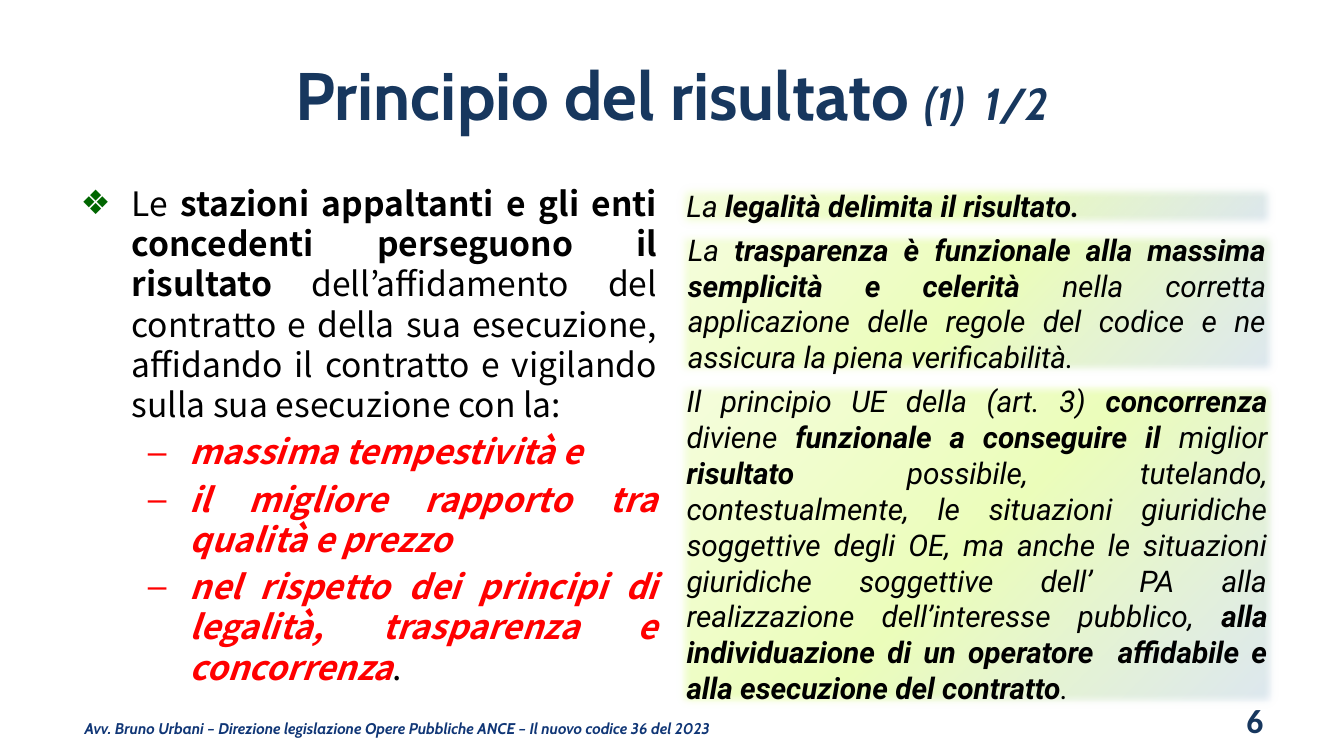
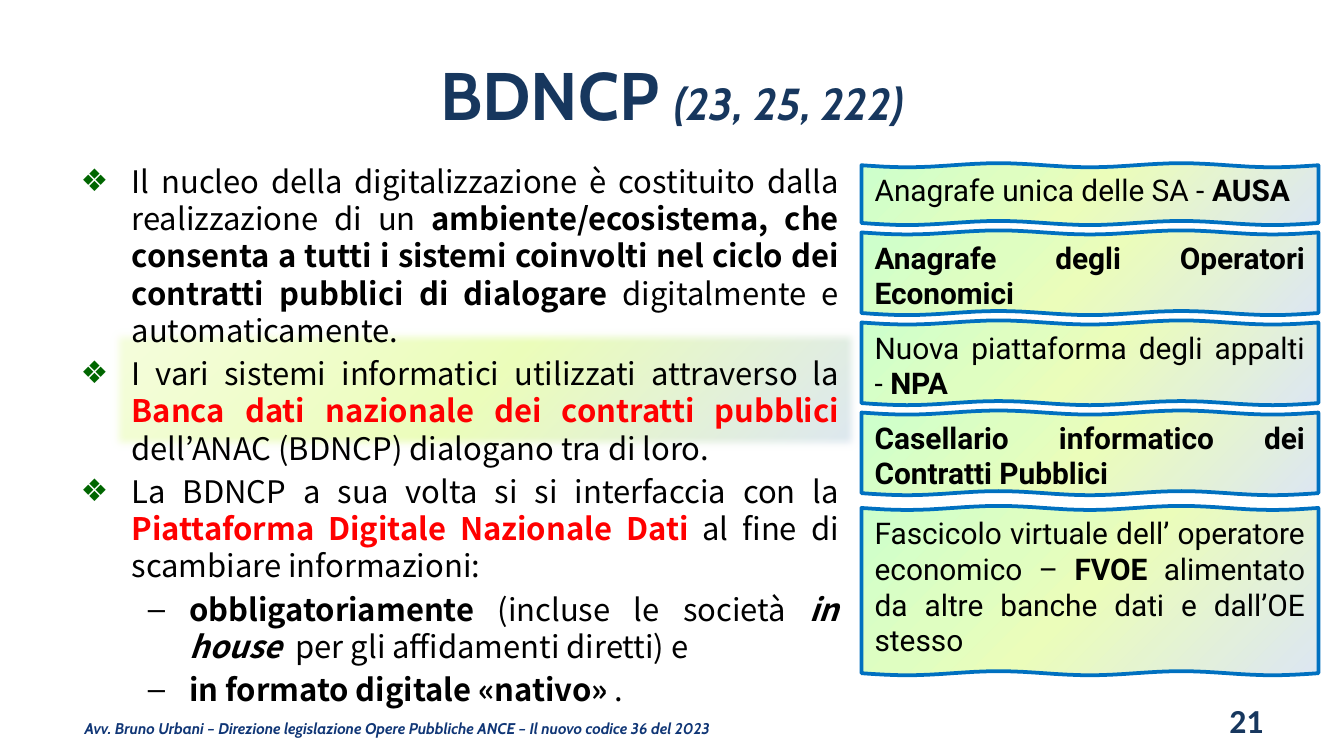
"""Builds two slides on the results principle and the BDNCP data bank."""
from dataclasses import dataclass
from math import pi, sin

from lxml import etree
from pptx import Presentation
from pptx import util as u
from pptx.dml.color import RGBColor
from pptx.enum import shapes, text
from pptx.oxml.ns import qn

I = u.Inches


@dataclass(frozen=True)
class Theme:
    navy: str = "17375E"
    footer: str = "103676"
    ink: str = "000000"
    red: str = "FF0000"
    bullet: str = "006600"
    edge: str = "0070C0"
    head_font: str = "Cabin"
    body_font: str = "Noto Sans CJK JP"
    box_font: str = "Roboto"
    number_font: str = "Calibri"
    title_size: float = 36
    subtitle_size: float = 24
    number_size: float = 18
    box_size: float = 16
    footer_size: float = 8.3
    panel_stops: tuple = ((0, "DCE6F2"), (50, "EBFDBA"), (100, "F5FDDE"))
    card_stops: tuple = ((0, "DCE6F2"), (50, "EBFDBA"), (69, "DFFEC1"), (100, "CCFFCC"))


T = Theme()
ALIGN = text.PP_ALIGN
FOOTER = "Avv. Bruno Urbani – Direzione legislazione Opere Pubbliche ANCE – Il nuovo codice 36 del 2023"

RESULT = {
    "title": ("Principio del risultato ", "(1)  1/2"),
    "number": "6",
    "body_at": (0.5, 1.31, 4.49, 4.23),
    "body_size": 18,
    "body": [
        (0, [("Le ", ""),
             ("stazioni appaltanti e gli enti concedenti perseguono il risultato ", "b"),
             ("dell’affidamento del contratto e della sua esecuzione, affidando il contratto "
              "e vigilando sulla sua esecuzione con la:", "")]),
        (1, [("massima tempestività e ", "bir")]),
        (1, [("il migliore rapporto tra qualità e prezzo ", "bir")]),
        (1, [("nel rispetto dei principi di legalità, trasparenza e concorrenza", "bir"),
             (".", "")]),
    ],
    "panels": [
        ((5.01, 2.81, 4.52, 2.48), [
            ("Il principio UE della (art. 3)", "i"), (" concorrenza ", "bi"),
            ("diviene", "i"), (" funzionale a conseguire il ", "bi"),
            ("miglior ", "i"), ("risultato ", "bi"),
            ("possibile, tutelando, contestualmente, le situazioni giuridiche soggettive degli OE, "
             "ma anche le situazioni giuridiche soggettive dell’ PA alla realizzazione "
             "dell’interesse pubblico, ", "i"),
            ("alla individuazione di un operatore  affidabile e alla esecuzione del contratto", "bi"),
            (". ", "i")]),
        ((5.02, 1.7, 4.5, 1.11), [
            ("La ", "i"),
            ("trasparenza è funzionale alla massima semplicità e celerità ", "bi"),
            ("nella corretta applicazione delle regole del codice e ne assicura la piena "
             "verificabilità.", "i")]),
        ((5.01, 1.34, 4.5, 0.38), [("La ", "i"), ("legalità delimita il risultato.", "bi")]),
    ],
}

DATA_BANK = {
    "title": ("BDNCP ", "(23, 25, 222)"),
    "number": "21",
    "body_at": (0.5, 1.16, 5.84, 4.09),
    "body_size": 16.6,
    "body": [
        (0, [("Il nucleo della digitalizzazione è costituito dalla realizzazione di un ", ""),
             ("ambiente/ecosistema, che consenta a tutti i sistemi coinvolti nel ciclo dei "
              "contratti pubblici di dialogare ", "b"),
             ("digitalmente e automaticamente.", "")]),
        (0, [("I vari sistemi informatici utilizzati attraverso la ", ""),
             ("Banca dati nazionale dei contratti pubblici ", "br"),
             ("dell’ANAC (BDNCP) dialogano tra di loro. ", "")]),
        (0, [("La BDNCP a sua volta si si interfaccia con la ", ""),
             ("Piattaforma Digitale Nazionale Dati ", "br"),
             ("al fine di scambiare informazioni:", "")]),
        (1, [("obbligatoriamente ", "b"), ("(incluse le società ", ""),
             ("in house  ", "bi"), ("per gli affidamenti diretti) e", "")]),
        (1, [("in formato digitale «nativo» ", "b"), (". ", "")]),
    ],
    "highlight": (0.81, 2.43, 5.6, 0.94),
    "cards": [
        (1.23, 0.43, [("Anagrafe unica delle SA - ", ""), ("AUSA ", "b")]),
        (1.73, 0.6, [("Anagrafe degli Operatori Economici", "b")]),
        (2.4, 0.6, [("Nuova piattaforma degli appalti - ", ""), ("NPA", "b")]),
        (3.07, 0.6, [("Casellario informatico dei Contratti Pubblici", "b")]),
        (3.78, 1.23, [("Fascicolo virtuale dell’ operatore economico – ", ""), ("FVOE ", "b"),
                      ("alimentato da altre banche dati e dall’OE stesso", "")]),
    ],
}
CARD_LEFT, CARD_WIDTH = 6.41, 3.4
BULLETS = (("❖", 0.38, -0.38, T.bullet), ("–", 0.81, -0.31, None))


def add_run(p, words, font, size, color, bold=False, italic=False):
    r = p.add_run()
    r.text = words
    f = r.font
    f.name, f.size, f.bold, f.italic = font, u.Pt(size), bold, italic
    f.color.rgb = RGBColor.from_string(color)
    for tag in ("a:ea", "a:cs"):
        etree.SubElement(r._r.get_or_add_rPr(), qn(tag)).set("typeface", font)


def add_styled(p, runs, font, size):
    p.alignment = ALIGN.JUSTIFY
    for words, style in runs:
        add_run(p, words, font, size, T.red if "r" in style else T.ink, "b" in style, "i" in style)


def frame(sp, anchor):
    tf = sp.text_frame
    tf.word_wrap = True
    tf.auto_size = text.MSO_AUTO_SIZE.NONE
    tf.vertical_anchor = anchor
    return tf


def place(sp, box):
    sp.left, sp.top, sp.width, sp.height = map(I, box)


def set_gradient(sp, stops):
    sp.shadow.inherit = False
    sp.fill.gradient()
    grad = sp._element.spPr.find(qn("a:gradFill"))
    for child in list(grad):
        grad.remove(child)
    gs_list = etree.SubElement(grad, qn("a:gsLst"))
    for pos, color in stops:
        gs = etree.SubElement(gs_list, qn("a:gs"), pos=str(pos * 1000))
        etree.SubElement(gs, qn("a:srgbClr"), val=color)
    etree.SubElement(grad, qn("a:lin"), ang=str(225 * 60000), scaled="0")


def add_bullet(p, level):
    char, margin, indent, color = BULLETS[level]
    p.level = level
    pPr = p._p.get_or_add_pPr()
    pPr.set("marL", str(I(margin)))
    pPr.set("indent", str(I(indent)))
    if color:
        bu_clr = etree.SubElement(pPr, qn("a:buClr"))
        etree.SubElement(bu_clr, qn("a:srgbClr"), val=color)
    etree.SubElement(pPr, qn("a:buChar"), char=char)


def add_label(s, box, words, font, size, color, align, italic=False):
    sp = s.shapes.add_textbox(*map(I, box))
    tf = frame(sp, text.MSO_ANCHOR.MIDDLE)
    tf.margin_left = tf.margin_right = I(0.07 if italic else 0.1)
    p = tf.paragraphs[0]
    p.alignment = align
    add_run(p, words, font, size, color, True, italic)


def add_panel(s, box, runs=()):
    sp = s.shapes.add_shape(shapes.MSO_SHAPE.RECTANGLE, *map(I, box))
    set_gradient(sp, T.panel_stops)
    sp.line.fill.background()
    effects = sp._element.spPr.find(qn("a:effectLst"))
    etree.SubElement(effects, qn("a:softEdge"), rad=str(I(0.07)))
    if runs:
        p = frame(sp, text.MSO_ANCHOR.MIDDLE).paragraphs[0]
        add_styled(p, runs, T.box_font, T.box_size)
    return sp


def add_card(s, top, height, runs):
    steps, wave = 40, 0.015
    across = [(CARD_LEFT + CARD_WIDTH * n / steps, wave * sin(5 * pi * n / steps))
              for n in range(steps + 1)]
    points = [(I(x), I(top + dy)) for x, dy in across]
    points += [(I(x), I(top + height + dy)) for x, dy in reversed(across)]
    fb = s.shapes.build_freeform(*points[0])
    fb.add_line_segments(points[1:], close=True)
    sp = fb.convert_to_shape()
    set_gradient(sp, T.card_stops)
    sp.line.color.rgb = RGBColor.from_string(T.edge)
    sp.line.width = u.Pt(2)
    tf = frame(sp, text.MSO_ANCHOR.TOP)
    tf.margin_top = I(0.05 + wave)
    add_styled(tf.paragraphs[0], runs, T.box_font, T.box_size)


def add_slide(prs, content):
    s = prs.slides.add_slide(prs.slide_layouts[1])
    add_label(s, (0.56, 5.27, 5.23, 0.3), FOOTER, T.head_font, T.footer_size, T.footer,
              ALIGN.LEFT, True)
    add_label(s, (7.17, 5.21, 2.33, 0.3), content["number"], T.number_font, T.number_size,
              T.navy, ALIGN.RIGHT)
    place(s.shapes.title, (0.5, 0.23, 9, 0.94))
    p = frame(s.shapes.title, text.MSO_ANCHOR.MIDDLE).paragraphs[0]
    p.alignment = ALIGN.CENTER
    main_title, subtitle = content["title"]
    add_run(p, main_title, T.head_font, T.title_size, T.navy, True)
    add_run(p, subtitle, T.head_font, T.subtitle_size, T.navy, True, True)

    body, size = s.placeholders[1], content["body_size"]
    place(body, content["body_at"])
    tf = frame(body, text.MSO_ANCHOR.TOP)
    for n, (level, runs) in enumerate(content["body"]):
        p = tf.add_paragraph() if n else tf.paragraphs[0]
        add_bullet(p, level)
        p.space_before = u.Pt(round(size * 0.2, 1) if n else 0)
        add_styled(p, runs, T.body_font, size)

    for box, runs in content.get("panels", ()):
        add_panel(s, box, runs)
    if "highlight" in content:
        sp = add_panel(s, content["highlight"])
        s.shapes._spTree.insert(2, sp._element)
    for card in content.get("cards", ()):
        add_card(s, *card)


def main():
    prs = Presentation()
    prs.slide_width, prs.slide_height = I(10), I(5.625)
    for content in (RESULT, DATA_BANK):
        add_slide(prs, content)
    prs.save("out.pptx")


if __name__ == "__main__":
    main()
